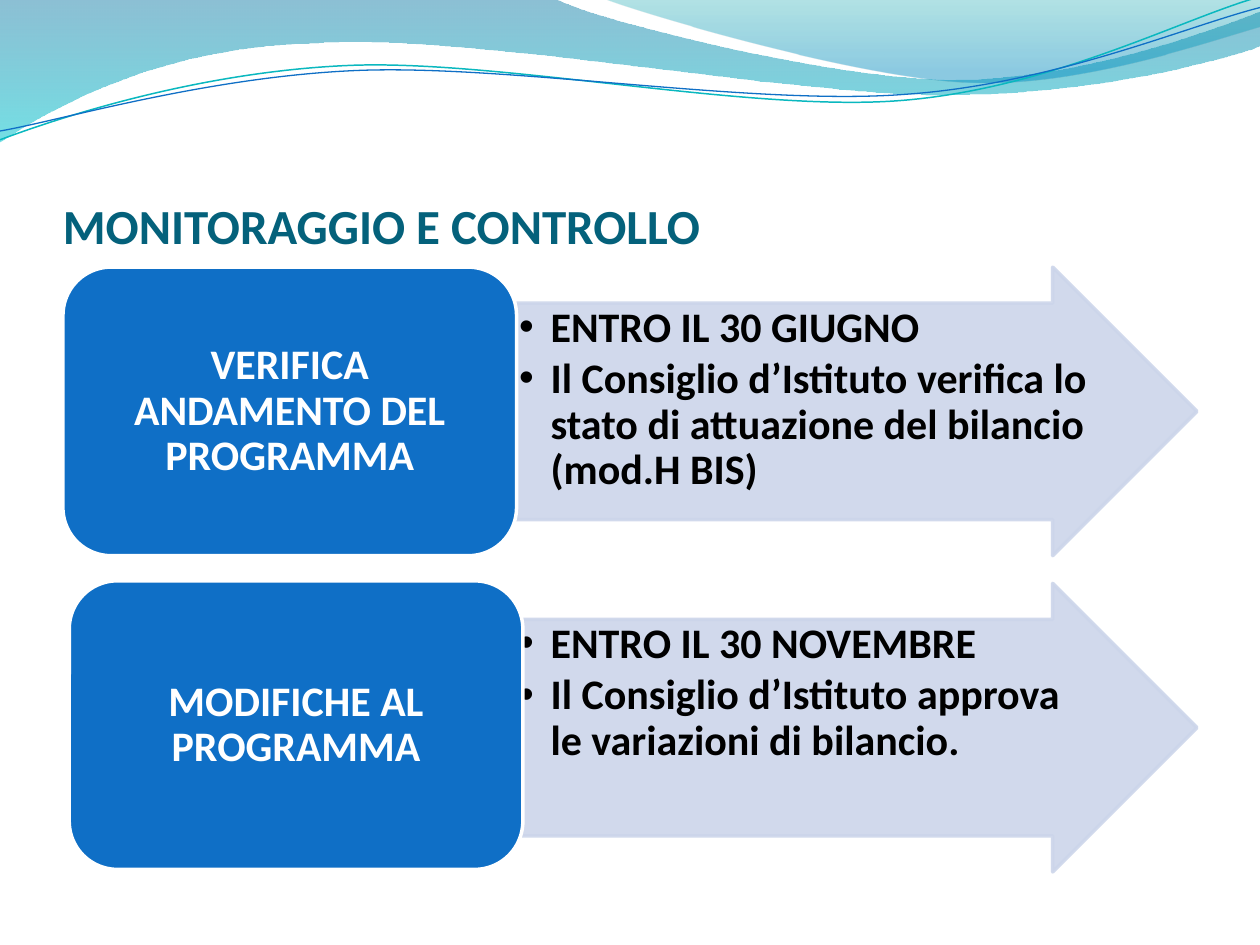
import lxml.etree
import pptx
import pptx.dml.color
import pptx.enum.shapes
import pptx.enum.text
import pptx.oxml.ns
import pptx.util

Inches = pptx.util.Inches
Pt = pptx.util.Pt
qn = pptx.oxml.ns.qn
SHAPE = pptx.enum.shapes.MSO_SHAPE
ALIGN = pptx.enum.text.PP_ALIGN
ANCHOR = pptx.enum.text.MSO_ANCHOR

WAVES = [
    ([[(0, 0)], [(4.4, -0.01)], [(4.76, 0.17), (6.64, 0.63), (7.58, 0.63)],
      [(8.53, 0.63), (9.58, 0.26), (10, 0.09)], [(10.01, 0.36)],
      [(9.83, 0.44), (8.7, 0.76), (7.46, 0.75)],
      [(6.22, 0.75), (3.82, 0.28), (2.57, 0.34)],
      [(1.29, 0.36), (0.46, 0.83), (-0.01, 1.13)], [(0, 0)]],
     [(0, "0074A1", 45), (1, "00C6CF", 55)]),
    ([[(4.79, -0.01)], [(5.09, 0.11), (6.82, 0.62), (7.69, 0.65)],
      [(8.56, 0.69), (9.61, 0.32), (10, 0.21)], [(10, 0)], [(4.79, -0.01)]],
     [(0, "00A1A9", 30), (0.8, "008BBF", 45)]),
]
CURVES = [
    ([[(0, 1.11)], [(0.48, 0.93), (1.58, 0.57), (2.77, 0.52)],
      [(3.95, 0.47), (5.93, 0.89), (7.13, 0.8)],
      [(8.33, 0.71), (9.38, 0.15), (9.98, -0.02)]], "0AB8BF", 0.85),
    ([[(0, 1.04)], [(0.47, 0.96), (1.64, 0.61), (2.83, 0.56)],
      [(4.03, 0.51), (5.97, 0.84), (7.17, 0.75)],
      [(8.36, 0.67), (9.41, 0.21), (10, 0.06)]], "0F6FC6", 0.75),
]
STEPS = [
    (0.5, 2.12, 2.12, "VERIFICA ANDAMENTO DEL PROGRAMMA",
     ["ENTRO IL 30 GIUGNO",
      "Il Consiglio d’Istituto verifica lo stato di attuazione del bilancio (mod.H BIS)"]),
    (0.55, 4.61, 4.63, "MODIFICHE AL PROGRAMMA",
     ["ENTRO IL 30 NOVEMBRE",
      "Il Consiglio d’Istituto approva le variazioni di bilancio."]),
]


def rgb(value):
    """Return the colour of a hex string."""
    return pptx.dml.color.RGBColor.from_string(value)


def apply(obj, values):
    """Set every attribute in a dict of format values."""
    for name, value in values.items():
        setattr(obj, name, value)


def set_alpha(clr, percent):
    """Make a colour element partly transparent."""
    lxml.etree.SubElement(clr, qn("a:alpha")).set("val", str(percent * 1000))


class Deck:
    """Hold the style and the current slide."""

    font, blue, pale, ink, teal = "Calibri", "0F6FC6", "CCD5EA", "000000", "04617B"

    def __init__(self, prs):
        """Add a blank slide to draw on."""
        self.s = prs.slides.add_slide(prs.slide_layouts[6])

    def outline(self, segments, close):
        """Add a freeform whose three-point segments are Bezier curves."""
        points = [(Inches(x), Inches(y)) for seg in segments for x, y in seg]
        fb = self.s.shapes.build_freeform(*points[0])
        fb.add_line_segments(points[1:], close=close)
        sp = fb.convert_to_shape()
        sp.shadow.inherit = False
        lines = iter(list(sp._element.iter(qn("a:lnTo"))))
        for seg in segments[1:]:
            group = [next(lines) for _ in seg]
            if len(group) == 3:
                bez = lxml.etree.Element(qn("a:cubicBezTo"))
                group[0].addprevious(bez)
                for line in group:
                    bez.append(line[0])
                    line.getparent().remove(line)
        return sp

    def wave(self, segments, stops):
        """Add a closed wave with a transparent vertical gradient."""
        sp = self.outline(segments, True)
        sp.line.fill.background()
        sp.fill.gradient()
        sp.fill.gradient_angle = 270
        for stop, (position, color, _) in zip(sp.fill.gradient_stops, stops):
            stop.position = position
            stop.color.rgb = rgb(color)
        for clr, (_, _, alpha) in zip(sp._element.iter(qn("a:srgbClr")), stops):
            set_alpha(clr, alpha)

    def curve(self, segments, color, width):
        """Add an open curved line."""
        sp = self.outline(segments, False)
        sp.fill.background()
        sp.line.color.rgb = rgb(color)
        sp.line.width = Pt(width)

    def shape(self, kind, box, fill, line):
        """Add a filled and outlined preset shape."""
        sp = self.s.shapes.add_shape(kind, *map(Inches, box))
        sp.shadow.inherit = False
        sp.fill.solid()
        sp.fill.fore_color.rgb = rgb(fill)
        sp.line.color.rgb = rgb(line)
        sp.line.width = Pt(2)
        return sp

    def text(self, sp, lines, frame, para, size, color):
        """Write bold paragraphs into a shape."""
        tf = sp.text_frame
        apply(tf, {"word_wrap": True, **frame})
        for i, line in enumerate(lines):
            p = tf.add_paragraph() if i else tf.paragraphs[0]
            apply(p, para)
            r = p.add_run()
            r.text = line
            apply(r.font, {"name": self.font, "size": Pt(size), "bold": True})
            r.font.color.rgb = rgb(color)
        return tf

    def title(self, line, box):
        """Add the slide title."""
        sp = self.s.shapes.add_textbox(*map(Inches, box))
        self.text(sp, [line], {"vertical_anchor": ANCHOR.BOTTOM, "margin_left": 0,
                               "margin_right": 0, "margin_bottom": 0}, {}, 28, self.teal)

    def arrow(self, box, lines):
        """Add a pale arrow with a bulleted list."""
        sp = self.shape(SHAPE.RIGHT_ARROW, box, self.pale, self.pale)
        sp.adjustments[0] = 0.75
        for clr in sp._element.spPr.iter(qn("a:srgbClr")):
            set_alpha(clr, 90)
        frame = {"vertical_anchor": ANCHOR.TOP, "margin_left": Inches(0.02),
                 "margin_top": Inches(0.02), "margin_right": 0, "margin_bottom": 0}
        para = {"alignment": ALIGN.LEFT, "level": 1, "line_spacing": 0.9,
                "space_after": Pt(3.6)}
        tf = self.text(sp, lines, frame, para, 24, self.ink)
        for p in tf.paragraphs:
            pPr = p._p.get_or_add_pPr()
            pPr.set("marL", str(Inches(0.25)))
            pPr.set("indent", str(Inches(-0.25)))
            lxml.etree.SubElement(pPr, qn("a:buFont")).set("typeface", "Arial")
            lxml.etree.SubElement(pPr, qn("a:buChar")).set("char", "•")

    def label(self, box, line):
        """Add a blue rounded box with a centred label."""
        sp = self.shape(SHAPE.ROUNDED_RECTANGLE, box, self.blue, "FFFFFF")
        self.text(sp, [line], {"vertical_anchor": ANCHOR.MIDDLE},
                  {"alignment": ALIGN.CENTER, "line_spacing": 0.9}, 24, "FFFFFF")


def main():
    """Build and save the slide."""
    prs = pptx.Presentation()
    apply(prs, {"slide_width": Inches(10), "slide_height": Inches(7.5)})
    deck = Deck(prs)
    for wave in WAVES:
        deck.wave(*wave)
    for curve in CURVES:
        deck.curve(*curve)
    deck.title("MONITORAGGIO E CONTROLLO", (0.5, 0.77, 9, 1.25))
    for left, top, arrow_top, name, lines in STEPS:
        deck.arrow((4.1, arrow_top, 5.4, 2.29), lines)
        deck.label((left, top, 3.6, 2.29), name)
    prs.save("out.pptx")


if __name__ == "__main__":
    main()
